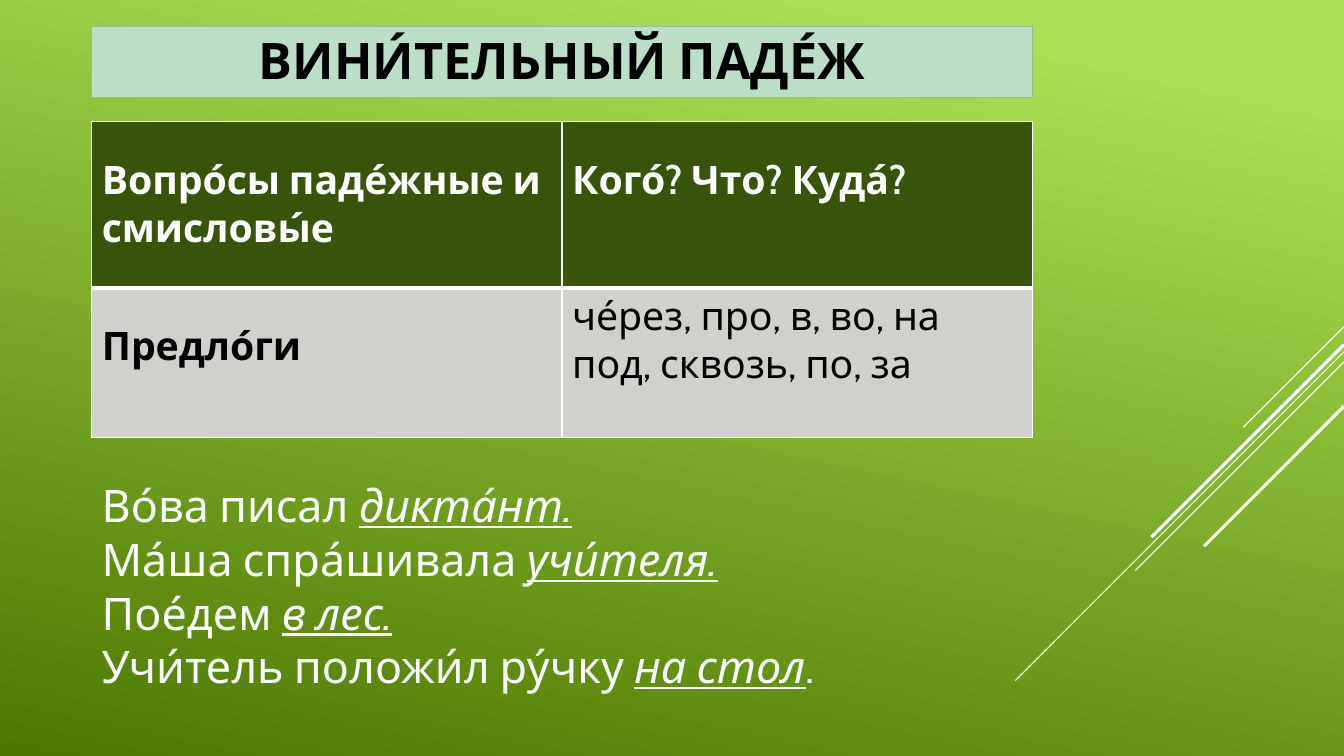
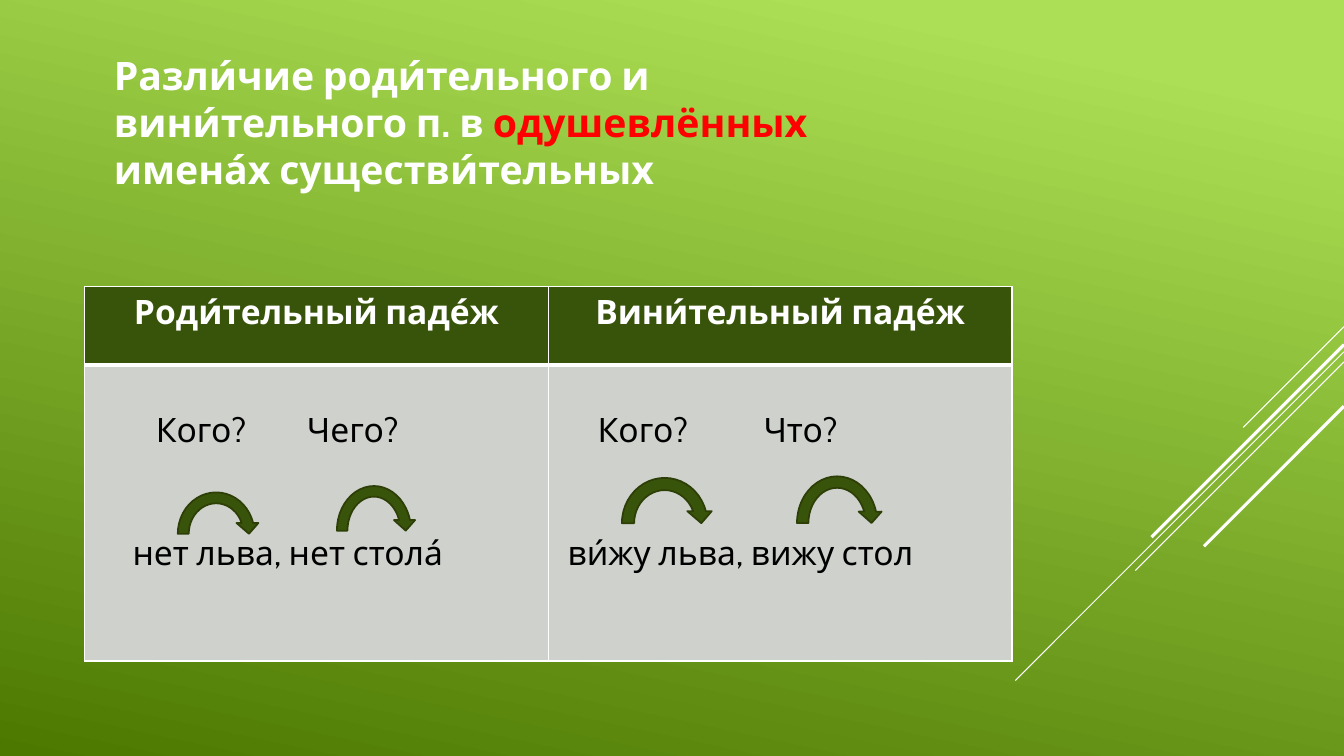
from lxml.etree import SubElement
from pptx import Presentation
from pptx.dml.color import RGBColor
from pptx.enum.shapes import MSO_CONNECTOR, MSO_SHAPE
from pptx.enum.text import PP_ALIGN
from pptx.oxml import parse_xml
from pptx.oxml.ns import nsdecls, qn
from pptx.util import Pt

COLORS = {
    "light": "ACDF55", "deep": "4C7800", "white": "FFFFFF", "black": "000000",
    "header": "38540A", "body": "CED1CC", "outline": "2E3E07", "red": "FF0000",
    "title": "BCDEC7", "title_edge": "8DBE9D",
}
FONT = "Cabin"
PAGE_W, PAGE_H = 960, 540
# top end on the right edge, 45-degree run, line width
RAYS = [(233.3, 72, 0.75), (251.3, 234.7, 0.75), (258.5, 149, 0.75),
        (246.2, 137.5, 2.25), (290.2, 100, 2.25)]


def rgb(name):
    return RGBColor.from_string(COLORS[name])


def add_run(p, text, size=28, color="white", bold=False, italic=False, underline=False):
    r = p.add_run()
    r.text = text
    font = r.font
    font.name, font.size, font.color.rgb = FONT, Pt(size), rgb(color)
    font.bold, font.italic, font.underline = bold, italic, underline


def set_tabs(p, stops):
    tabs = SubElement(p._p.get_or_add_pPr(), qn("a:tabLst"))
    for stop in stops:
        SubElement(tabs, qn("a:tab"), pos=str(Pt(stop)), algn="l")


def set_borders(cell, color="white", width=1, bottom=None, alpha=100):
    tc_pr = cell._tc.get_or_add_tcPr()
    for i, side in enumerate("LRTB"):
        w = bottom if side == "B" and bottom else width
        tc_pr.insert(i, parse_xml(
            f'<a:ln{side} {nsdecls("a")} w="{Pt(w)}"><a:solidFill>'
            f'<a:srgbClr val="{COLORS[color]}"><a:alpha val="{alpha * 1000}"/></a:srgbClr>'
            f'</a:solidFill><a:prstDash val="solid"/></a:ln{side}>'))


class Deck:
    def __init__(self):
        self.prs = Presentation()
        self.prs.slide_width, self.prs.slide_height = Pt(PAGE_W), Pt(PAGE_H)
        self.s = None

    def new_slide(self):
        self.s = self.prs.slides.add_slide(self.prs.slide_layouts[6])
        fill = self.s.background.fill
        fill.gradient()
        fill.gradient_angle = 258
        for stop, color, position in zip(fill.gradient_stops, ("light", "deep"), (0.1, 1)):
            stop.color.rgb, stop.position = rgb(color), position
        for y, run, width in RAYS:
            self.line(PAGE_W, y, PAGE_W - run, y + run, width)

    def line(self, x1, y1, x2, y2, width):
        c = self.s.shapes.add_connector(MSO_CONNECTOR.STRAIGHT, Pt(x1), Pt(y1), Pt(x2), Pt(y2))
        c.line.color.rgb, c.line.width = rgb("white"), Pt(width)
        SubElement(c._element.spPr, qn("a:effectLst"))

    def text(self, x, y, w, h, paragraphs, **fmt):
        """Each paragraph is a list of (text, format overrides)."""
        tf = self.s.shapes.add_textbox(Pt(x), Pt(y), Pt(w), Pt(h)).text_frame
        tf.word_wrap = True
        for i, runs in enumerate(paragraphs):
            p = tf.paragraphs[0] if i == 0 else tf.add_paragraph()
            for text, extra in runs:
                add_run(p, text, **{**fmt, **extra})

    def table(self, x, y, w, heights, columns):
        t = self.s.shapes.add_table(len(heights), columns, Pt(x), Pt(y), Pt(w),
                                    Pt(sum(heights))).table
        t.first_row = t.horz_banding = False
        for row, height in zip(t.rows, heights):
            row.height = Pt(height)
        return t

    def cell(self, cell, lines, fill, top=3.6, align=PP_ALIGN.LEFT, tabs=(), gap=0,
             border=None, **fmt):
        """Fill a cell; tabs holds the tab stops of each line, gap the space between lines."""
        cell.margin_top = Pt(top)
        cell.fill.solid()
        cell.fill.fore_color.rgb = rgb(fill)
        set_borders(cell, **(border or {}))
        tf = cell.text_frame
        for i, line in enumerate(lines):
            p = tf.paragraphs[0] if i == 0 else tf.add_paragraph()
            p.alignment = align
            if i:
                p.space_before = Pt(gap)
            if tabs:
                set_tabs(p, tabs[i])
            add_run(p, line, **fmt)

    def arrow(self, x, y, w, h):
        sp = self.s.shapes.add_shape(MSO_SHAPE.CIRCULAR_ARROW, Pt(x), Pt(y), Pt(w), Pt(h))
        sp.shadow.inherit = False
        sp.fill.solid()
        sp.fill.fore_color.rgb = rgb("header")
        sp.line.color.rgb, sp.line.width = rgb("outline"), Pt(1.25)


HEADER = {"fill": "header", "bold": True, "border": {"bottom": 3}}
BODY = {"fill": "body", "color": "black"}


def accusative_slide(deck):
    deck.new_slide()
    t = deck.table(65.5, 87, 672, [118.6, 107], 2)
    low = 25.2
    deck.cell(t.cell(0, 0), ["Вопро́сы паде́жные и смисловы́е"], top=low, **HEADER)
    deck.cell(t.cell(0, 1), ["Кого́? Что? Куда́?"], top=low, **HEADER)
    deck.cell(t.cell(1, 0), ["Предло́ги"], top=low, bold=True, **BODY)
    deck.cell(t.cell(1, 1), ["че́рез, про, в, во, на под, сквозь, по, за"], **BODY)

    title = deck.table(65.5, 18.7, 672, [50.4], 1)
    deck.cell(title.cell(0, 0), ["ВИНИ́ТЕЛЬНЫЙ ПАДЕ́Ж"], "title", align=PP_ALIGN.CENTER,
              border={"color": "title_edge", "width": 0.75, "alpha": 60},
              size=36, color="black", bold=True)

    examples = [("Во́ва писал ", "дикта́нт.", ""), ("Ма́ша спра́шивала ", "учи́теля.", ""),
                ("Пое́дем ", "в лес.", ""), ("Учи́тель положи́л ру́чку ", "на стол", ".")]
    marked = {"italic": True, "underline": True}
    deck.text(65.5, 337.7, 701, 162.7,
              [[(text, fmt) for text, fmt in zip(parts, ({}, marked, {})) if text]
               for parts in examples], size=32)


def difference_slide(deck):
    deck.new_slide()
    t = deck.table(60.5, 204.8, 662.4, [56, 211.4], 2)
    columns = [
        ("Роди́тельный паде́ж", ["\tКого?\tЧего?", "\tнет льва, нет стола́"],
         [(43.6, 151.5), (27,)]),
        ("Вини́тельный паде́ж", ["\tКого?\tЧто?", "\tви́жу льва, вижу стол"],
         [(28, 146.5), (6.5,)]),
    ]
    for i, (heading, lines, tabs) in enumerate(columns):
        deck.cell(t.cell(0, i), [heading], align=PP_ALIGN.CENTER, size=24, **HEADER)
        deck.cell(t.cell(1, i), lines, top=32.4, tabs=tabs, gap=58.5, size=24, **BODY)

    deck.text(74.2, 33.1, 583.2, 108.7,
              [[("Разли́чие роди́тельного и вини́тельного п. в ", {}),
                ("одушевлённых ", {"color": "red"}),
                ("имена́х существи́тельных", {})]], bold=True)

    for box in [(123.1, 347.8, 62.6, 67), (236.9, 343.4, 60.5, 71.3),
                (439.9, 337, 69.8, 73.4), (565.2, 336.2, 65.5, 74.9)]:
        deck.arrow(*box)


def main():
    deck = Deck()
    accusative_slide(deck)
    difference_slide(deck)
    deck.prs.save("out.pptx")


if __name__ == "__main__":
    main()
